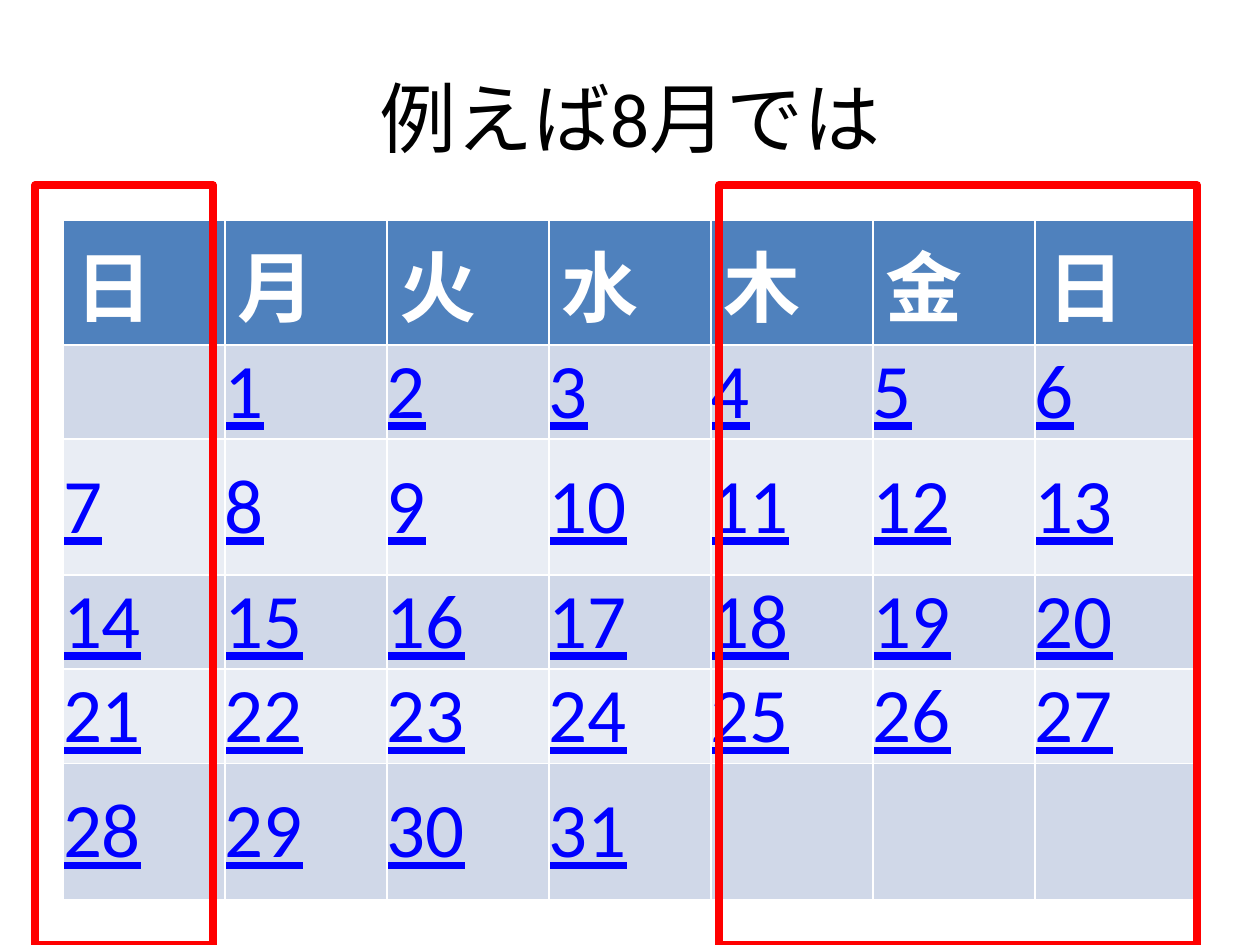
import pptx
import pptx.util
import pptx.dml.color
import pptx.enum.shapes
import pptx.enum.text

Inches = pptx.util.Inches
ANCHOR_MIDDLE = pptx.enum.text.MSO_ANCHOR.MIDDLE

TITLE = "例えば8月では"
WEEKDAYS = ["日", "月", "火", "水", "木", "金", "日"]
FIRST_COLUMN = 1
LAST_DAY = 31
ROW_HEIGHTS = [0.73, 0.73, 1.08, 0.73, 0.73, 1.08]
FRAMES = [(5.71, 3.79), (0.28, 1.41)]
COLORS = {
    "text": "000000",
    "header": "4F81BD",
    "header_text": "FFFFFF",
    "bands": ["D0D8E8", "E9EDF4"],
    "day": "0000FF",
    "frame": "FF0000",
}


def rgb(value):
    return pptx.dml.color.RGBColor.from_string(value)


def set_attributes(target, values):
    for name, value in values.items():
        setattr(target, name, value)


def write(text_frame, text, color, **extra):
    paragraph = text_frame.paragraphs[0]
    run = paragraph.add_run()
    run.text = text
    set_attributes(run.font, {"name": "Calibri", "size": pptx.util.Pt(44), **extra})
    run.font.color.rgb = rgb(color)
    return paragraph


def fill_cell(cell, color):
    cell.fill.solid()
    cell.fill.fore_color.rgb = rgb(color)


def add_title(slide):
    title = slide.shapes.title
    set_attributes(title, {
        "left": Inches(0.5), "top": Inches(0.3),
        "width": Inches(9), "height": Inches(1.25),
    })
    title.text_frame.vertical_anchor = ANCHOR_MIDDLE
    paragraph = write(title.text_frame, TITLE, COLORS["text"])
    paragraph.alignment = pptx.enum.text.PP_ALIGN.CENTER


def add_calendar(slide):
    columns = len(WEEKDAYS)
    table = slide.shapes.add_table(
        len(ROW_HEIGHTS), columns,
        Inches(0.5), Inches(1.75), Inches(9), Inches(sum(ROW_HEIGHTS)),
    ).table
    for row, height in zip(table.rows, ROW_HEIGHTS):
        row.height = Inches(height)
    for column, weekday in enumerate(WEEKDAYS):
        cell = table.cell(0, column)
        fill_cell(cell, COLORS["header"])
        write(cell.text_frame, weekday, COLORS["header_text"], bold=True)
    for week in range(len(ROW_HEIGHTS) - 1):
        for column in range(columns):
            cell = table.cell(week + 1, column)
            fill_cell(cell, COLORS["bands"][week % 2])
            day = week * columns + column - FIRST_COLUMN + 1
            if 1 <= day <= LAST_DAY:
                set_attributes(cell, {
                    "vertical_anchor": ANCHOR_MIDDLE,
                    "margin_left": 0, "margin_right": 0,
                    "margin_top": 0, "margin_bottom": 0,
                })
                write(cell.text_frame, str(day), COLORS["day"], bold=False, underline=True)


def add_frames(slide):
    for left, width in FRAMES:
        frame = slide.shapes.add_shape(
            pptx.enum.shapes.MSO_SHAPE.RECTANGLE,
            Inches(left), Inches(1.47), Inches(width), Inches(6.03),
        )
        frame.shadow.inherit = False
        frame.fill.background()
        frame.line.color.rgb = rgb(COLORS["frame"])
        frame.line.width = pptx.util.Pt(4.5)


def main():
    presentation = pptx.Presentation()
    set_attributes(presentation, {"slide_width": Inches(10), "slide_height": Inches(7.5)})
    slide = presentation.slides.add_slide(presentation.slide_layouts[5])
    add_title(slide)
    add_calendar(slide)
    add_frames(slide)
    presentation.save("out.pptx")


if __name__ == "__main__":
    main()
